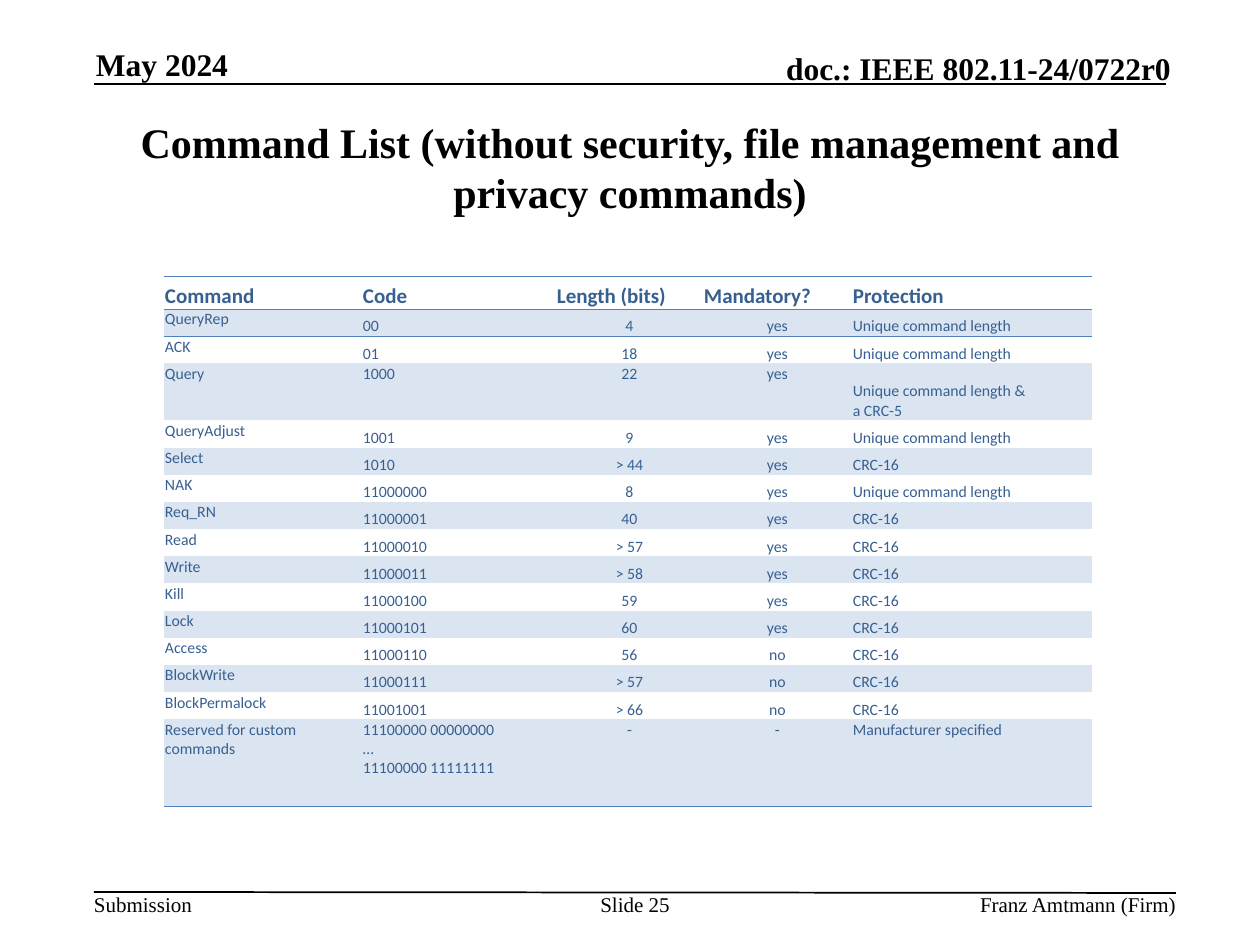
"""Build a slide listing radio commands with their code, length and protection."""
from dataclasses import dataclass

from lxml import etree
from pptx import Presentation
from pptx.dml.color import RGBColor
from pptx.enum.shapes import MSO_CONNECTOR
from pptx.enum.text import MSO_ANCHOR, PP_ALIGN
from pptx.oxml.ns import qn
from pptx.util import Pt

LEFT, CENTER, RIGHT = PP_ALIGN.LEFT, PP_ALIGN.CENTER, PP_ALIGN.RIGHT
TOP, MIDDLE, BOTTOM = MSO_ANCHOR.TOP, MSO_ANCHOR.MIDDLE, MSO_ANCHOR.BOTTOM
STRAIGHT = MSO_CONNECTOR.STRAIGHT
EMU_PER_PX = 914400 / 126
PLAIN_TABLE_STYLE = "{2D5ABB26-0587-4C30-8999-92F81FD0307C}"


@dataclass(frozen=True)
class Theme:
    ink: str = "000000"
    table_ink: str = "376091"
    band: str = "DBE5F1"
    border: str = "4F81BD"
    page_font: str = "Times New Roman"
    table_font: str = "Calibri"
    title_size: int = 24
    header_size: int = 18
    footer_size: int = 12
    heading_size: int = 12
    cell_size: int = 9
    rule_width: int = 1
    border_width: float = 0.5


THEME = Theme()
TITLE = "Command List (without security, file management and privacy commands)"
TITLE_AREA = (94, 94, 1072, 146)
RULES = [(94, 84, 1166, 84), (94, 892, 1176, 893)]
HEADER_TEXTS = [
    ("May 2024", (96, 45, 258, 38), LEFT),
    ("doc.: IEEE 802.11-24/0722r0", (689, 49, 482, 38), RIGHT),
]
FOOTER_TEXTS = [
    ("Submission", (94, 892, 98, 25), LEFT),
    ("Slide 25", (598, 892, 74, 50), CENTER),
    ("Franz Amtmann (Firm)", (738, 892, 438, 25), RIGHT),
]
HEADINGS = ("Command", "Code", "Length (bits)", "Mandatory?", "Protection")
COMMANDS = [
    ("QueryRep", "00", "4", "yes", "Unique command length"),
    ("ACK", "01", "18", "yes", "Unique command length"),
    ("Query", "1000", "22", "yes", "Unique command length &\va CRC-5"),
    ("QueryAdjust", "1001", "9", "yes", "Unique command length"),
    ("Select", "1010", "> 44", "yes", "CRC-16"),
    ("NAK", "11000000", "8", "yes", "Unique command length"),
    ("Req_RN", "11000001", "40", "yes", "CRC-16"),
    ("Read", "11000010", "> 57", "yes", "CRC-16"),
    ("Write", "11000011", "> 58", "yes", "CRC-16"),
    ("Kill", "11000100", "59", "yes", "CRC-16"),
    ("Lock", "11000101", "60", "yes", "CRC-16"),
    ("Access", "11000110", "56", "no", "CRC-16"),
    ("BlockWrite", "11000111", "> 57", "no", "CRC-16"),
    ("BlockPermalock", "11001001", "> 66", "no", "CRC-16"),
    ("Reserved for custom \vcommands", "11100000 00000000\v…\v11100000 11111111",
     "-", "-", "Manufacturer specified"),
]
TABLE_AREA = (164, 276, 928, 531)
COLUMN_WIDTHS = (198, 194, 147, 149, 240)
CENTERED_COLUMNS = (2, 3)
QUERY_ROW, LAST_ROW = 3, len(COMMANDS)
TALL_ROWS = {0: 33, QUERY_ROW: 57, LAST_ROW: 87}


def px(length):
    return round(length * EMU_PER_PX)


def place(area):
    return [px(length) for length in area]


def set_margins(target, left, top, right, bottom):
    target.margin_left, target.margin_top = px(left), px(top)
    target.margin_right, target.margin_bottom = px(right), px(bottom)


def write(frame, text, size, align, font=THEME.page_font, color=THEME.ink, bold=False):
    frame.text = text
    for para in frame.paragraphs:
        para.alignment = align
        for span in para.runs:
            span.font.name = font
            span.font.size = Pt(size)
            span.font.bold = bold
            span.font.color.rgb = RGBColor.from_string(color)


def add_label(page, text, area, align, size, anchor, bold):
    frame = page.shapes.add_textbox(*place(area)).text_frame
    frame.word_wrap = True
    frame.vertical_anchor = anchor
    set_margins(frame, 0, 0, 0, 0)
    write(frame, text, size, align, bold=bold)


def add_rule(page, ends):
    rule = page.shapes.add_connector(STRAIGHT, *place(ends))
    rule.line.color.rgb = RGBColor.from_string(THEME.ink)
    rule.line.width = Pt(THEME.rule_width)
    etree.SubElement(rule.element.spPr, qn("a:effectLst"))


def add_border(cell, tag):
    properties = cell._tc.get_or_add_tcPr()
    line = etree.SubElement(properties, qn(tag), w=str(Pt(THEME.border_width)))
    fill = etree.SubElement(line, qn("a:solidFill"))
    etree.SubElement(fill, qn("a:srgbClr"), val=THEME.border)


def fill_cell(cell, text, row, column):
    heading = row == 0
    set_margins(cell, 1, 1, 1, 0)
    centered = column in CENTERED_COLUMNS and not heading
    write(cell.text_frame, text, THEME.heading_size if heading else THEME.cell_size,
          CENTER if centered else LEFT, THEME.table_font, THEME.table_ink, heading)
    at_top = (not heading and column == 0) or row == LAST_ROW
    at_top = at_top or (row == QUERY_ROW and column < len(HEADINGS) - 1)
    cell.vertical_anchor = TOP if at_top else BOTTOM
    if row <= 1:
        add_border(cell, "a:lnT")
    if row in (0, LAST_ROW):
        add_border(cell, "a:lnB")
    if row % 2:
        cell.fill.solid()
        cell.fill.fore_color.rgb = RGBColor.from_string(THEME.band)
    else:
        cell.fill.background()


def add_command_table(page):
    rows = [HEADINGS, *COMMANDS]
    holder = page.shapes.add_table(len(rows), len(HEADINGS), *place(TABLE_AREA))
    table = holder.table
    table.first_row = table.horz_banding = False
    for style in holder.element.iter(qn("a:tableStyleId")):
        style.text = PLAIN_TABLE_STYLE
    for column, width in zip(table.columns, COLUMN_WIDTHS):
        column.width = px(width)
    plain_height = (TABLE_AREA[3] - sum(TALL_ROWS.values())) / (len(rows) - len(TALL_ROWS))
    for row, texts in enumerate(rows):
        table.rows[row].height = px(TALL_ROWS.get(row, plain_height))
        for column, text in enumerate(texts):
            fill_cell(table.cell(row, column), text, row, column)


def main():
    deck = Presentation()
    deck.slide_width, deck.slide_height = px(1260), px(945)
    page = deck.slides.add_slide(deck.slide_layouts[5])
    title = page.shapes.title
    title.left, title.top, title.width, title.height = place(TITLE_AREA)
    title.text_frame.vertical_anchor = MIDDLE
    write(title.text_frame, TITLE, THEME.title_size, CENTER, bold=True)
    for ends in RULES:
        add_rule(page, ends)
    for text, area, align in HEADER_TEXTS:
        add_label(page, text, area, align, THEME.header_size, BOTTOM, True)
    for text, area, align in FOOTER_TEXTS:
        add_label(page, text, area, align, THEME.footer_size, TOP, False)
    add_command_table(page)
    deck.save("out.pptx")


if __name__ == "__main__":
    main()
